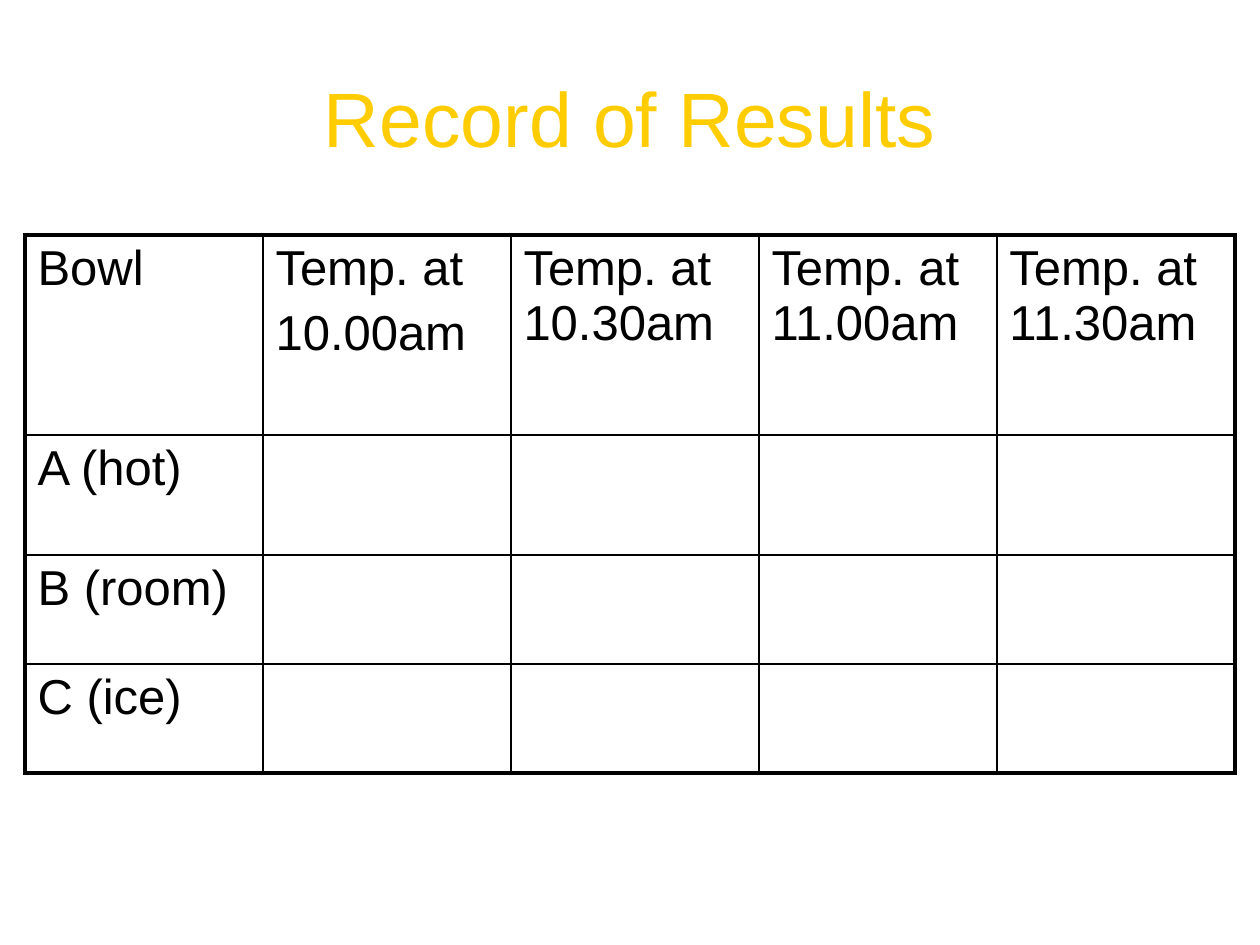
from lxml import etree
from pptx import Presentation
from pptx.dml.color import RGBColor
from pptx.enum import text
from pptx.oxml.ns import qn
from pptx.util import Pt

PX = 914400 // 126  # EMU per pixel


def px(length):
    return length * PX


def color(value):
    return RGBColor.from_string(value)


class SlideBuilder:
    font = "Arial"
    title_color = "FFCC00"
    ink = "000000"
    thin, thick = 1, 2.25

    def __init__(self, presentation):
        self.slide = presentation.slides.add_slide(presentation.slide_layouts[6])

    def add_run(self, paragraph, content, size, fill):
        run = paragraph.add_run()
        run.text = content
        run.font.name = self.font
        run.font.size = Pt(size)
        run.font.color.rgb = color(fill)

    def add_title(self, content, left, top, width, height):
        box = self.slide.shapes.add_textbox(px(left), px(top), px(width), px(height))
        frame = box.text_frame
        frame.word_wrap = True
        frame.vertical_anchor = text.MSO_ANCHOR.MIDDLE
        paragraph = frame.paragraphs[0]
        paragraph.alignment = text.PP_ALIGN.CENTER
        self.add_run(paragraph, content, 44, self.title_color)

    def fill_cell(self, cell, lines, size=28):
        for index, line in enumerate(lines):
            frame = cell.text_frame
            paragraph = frame.add_paragraph() if index else frame.paragraphs[0]
            if index:
                paragraph.space_before = Pt(size * 0.2)
            self.add_run(paragraph, line, size, self.ink)

    def set_borders(self, cell, outer_sides):
        properties = cell._tc.get_or_add_tcPr()
        for index, (side, outer) in enumerate(outer_sides.items()):
            width = Pt(self.thick if outer else self.thin)
            line = etree.Element(qn(f"a:ln{side}"), w=str(int(width)))
            fill = etree.SubElement(line, qn("a:solidFill"))
            etree.SubElement(fill, qn("a:srgbClr"), val=self.ink)
            properties.insert(index, line)

    def add_table(self, rows, left, top, widths, heights):
        frame = self.slide.shapes.add_table(
            len(heights), len(widths), px(left), px(top), px(sum(widths)), px(sum(heights)))
        table = frame.table
        table.first_row = table.horz_banding = False
        for column, width in zip(table.columns, widths):
            column.width = px(width)
        for row, height in zip(table.rows, heights):
            row.height = px(height)
        last_row, last_column = len(heights) - 1, len(widths) - 1
        for r in range(len(heights)):
            for c in range(len(widths)):
                cell = table.cell(r, c)
                cell.fill.background()
                if c < len(rows[r]):
                    self.fill_cell(cell, rows[r][c])
                self.set_borders(cell, {"L": c == 0, "R": c == last_column,
                                        "T": r == 0, "B": r == last_row})


def main():
    presentation = Presentation()
    presentation.slide_width, presentation.slide_height = px(1260), px(945)
    builder = SlideBuilder(presentation)

    # Title
    builder.add_title("Record of Results", 63, 38, 1134, 157)

    # Results table: each cell is a list of paragraphs, readings left blank
    header = [["Bowl"], ["Temp. at", "10.00am"]]
    header += [[f"Temp. at {time}"] for time in ("10.30am", "11.00am", "11.30am")]
    bowls = [[[bowl]] for bowl in ("A (hot)", "B (room)", "C (ice)")]
    builder.add_table([header, *bowls], 25, 235,
                      widths=[238, 248, 248, 238, 238], heights=[200, 120, 109, 109])

    presentation.save("out.pptx")


if __name__ == "__main__":
    main()
